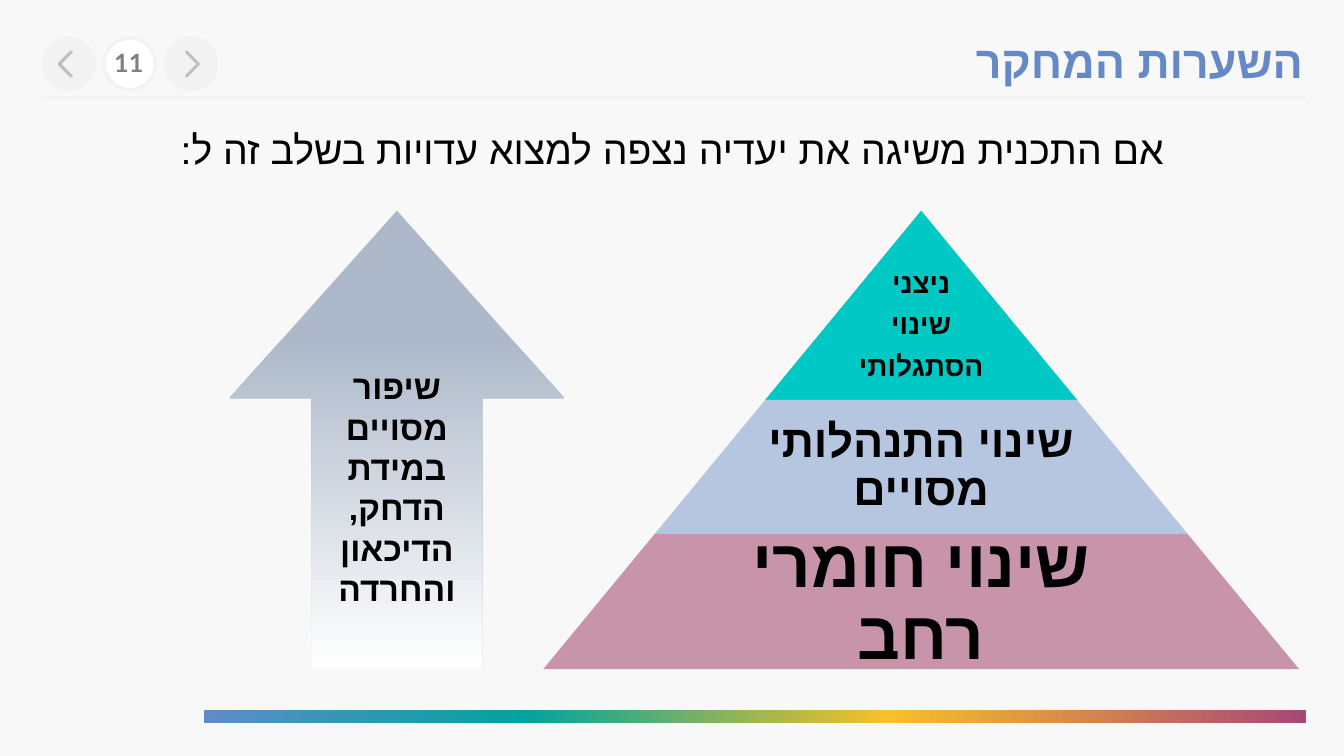
from lxml import etree
from pptx import Presentation
from pptx.dml.color import RGBColor
from pptx.enum.shapes import MSO_CONNECTOR, MSO_SHAPE
from pptx.enum.text import MSO_ANCHOR as Anchor, PP_ALIGN as Align
from pptx.oxml.ns import qn
from pptx.util import Pt

BLACK = RGBColor(0x00, 0x00, 0x00)
WHITE = RGBColor(0xFF, 0xFF, 0xFF)
BACKGROUND = RGBColor(0xF8, 0xF8, 0xF8)
PALE_GRAY = RGBColor(0xF2, 0xF2, 0xF2)
CHEVRON_GRAY = RGBColor(0xBF, 0xBF, 0xBF)
NUMBER_GRAY = RGBColor(0x80, 0x80, 0x80)
TITLE_BLUE = RGBColor(0x64, 0x89, 0xC6)
TOP_TEAL = RGBColor(0x00, 0xC9, 0xC5)
MIDDLE_BLUE = RGBColor(0xB6, 0xC6, 0xE1)
BASE_ROSE = RGBColor(0xC8, 0x94, 0xAA)
BAR_BLUE = RGBColor(0x5E, 0x8C, 0xC8)
BAR_TEAL = RGBColor(0x00, 0xA3, 0xA0)
BAR_YELLOW = RGBColor(0xF7, 0xC0, 0x27)
BAR_PURPLE = RGBColor(0xA6, 0x49, 0x77)
ARROW_GRAY = RGBColor(0xAD, 0xB9, 0xCA)


def fill_gradient(shape, degrees, stops):
    """Fill with a linear gradient; degrees run clockwise from left to right."""
    shape.fill.gradient()
    gradient = shape.fill._xPr.find(qn("a:gradFill"))
    stop_list = gradient.find(qn("a:gsLst"))
    for old_stop in list(stop_list):
        stop_list.remove(old_stop)
    for percent, color in stops:
        stop = etree.SubElement(stop_list, qn("a:gs"), pos=str(percent * 1000))
        etree.SubElement(stop, qn("a:srgbClr"), val=str(color))
    gradient.find(qn("a:lin")).set("ang", str(degrees * 60000))


def write_text(shape, lines, size, frame_format, paragraph_format,
               color=BLACK, bold=True, font_name="Arial"):
    """Write right-to-left paragraphs into a shape or text box."""
    frame = shape.text_frame
    frame.word_wrap = True
    for name, value in frame_format.items():
        setattr(frame, name, value)
    frame.text = "\n".join(lines)
    for paragraph in frame.paragraphs:
        for name, value in paragraph_format.items():
            setattr(paragraph, name, value)
        paragraph._p.get_or_add_pPr().set("rtl", "1")
        font = paragraph.runs[0].font
        font_format = {"name": font_name, "size": Pt(size), "bold": bold}
        for name, value in font_format.items():
            setattr(font, name, value)
        font.color.rgb = color
        etree.SubElement(font._element, qn("a:cs"), typeface=font_name)


presentation = Presentation()
presentation.slide_width = Pt(960)
presentation.slide_height = Pt(540)
slide = presentation.slides.add_slide(presentation.slide_layouts[6])
shapes = slide.shapes

# Background and colour bar
background = shapes.add_shape(MSO_SHAPE.RECTANGLE, 0, 0, Pt(960), Pt(540))
background.fill.solid()
background.fill.fore_color.rgb = BACKGROUND
bar = shapes.add_shape(MSO_SHAPE.RECTANGLE, Pt(145.5), Pt(507.4), Pt(787.5), Pt(8.8))
fill_gradient(bar, 0, [(0, BAR_BLUE), (29, BAR_TEAL), (62, BAR_YELLOW), (100, BAR_PURPLE)])
for shape in (background, bar):
    shape.line.fill.background()
    shape.shadow.inherit = False

# Navigation circles
for index, color in enumerate([PALE_GRAY, WHITE, PALE_GRAY]):
    circle = shapes.add_shape(MSO_SHAPE.OVAL, Pt(30.8 + 43.6 * index), Pt(27.3),
                              Pt(36.6), Pt(36.6))
    circle.fill.solid()
    circle.fill.fore_color.rgb = color
    circle.line.color.rgb = PALE_GRAY
    circle.line.width = Pt(2.25)
    circle.shadow.inherit = False

# Chevrons in the outer circles
for tip, back in [(42.3, 51.3), (141.8, 132.8)]:
    builder = shapes.build_freeform(Pt(back), Pt(36.7))
    builder.add_line_segments([(Pt(tip), Pt(45.7)), (Pt(back), Pt(54.7))], close=False)
    chevron = builder.convert_to_shape()
    chevron.fill.background()
    chevron.line.color.rgb = CHEVRON_GRAY
    chevron.line.width = Pt(2.25)
    chevron.shadow.inherit = False

# Line under the header
rule = shapes.add_connector(MSO_CONNECTOR.STRAIGHT, Pt(30.2), Pt(69.8), Pt(933), Pt(69.8))
rule.line.color.rgb = PALE_GRAY
rule.line.width = Pt(2.25)
etree.SubElement(rule._element.spPr, qn("a:effectLst"))

# Slide number, lead sentence and title
number = shapes.add_textbox(Pt(74.2), Pt(30.2), Pt(35.3), Pt(28.8))
write_text(number, ["11"], 18, {"vertical_anchor": Anchor.MIDDLE},
           {"alignment": Align.RIGHT}, NUMBER_GRAY, font_name="Lato")
lead = shapes.add_textbox(Pt(25.2), Pt(85.7), Pt(910), Pt(41))
write_text(lead, ["אם התכנית משיגה את יעדיה נצפה למצוא עדויות בשלב זה ל:"], 28,
           {}, {"alignment": Align.CENTER}, bold=False)
title = shapes.add_textbox(Pt(220.3), Pt(20.2), Pt(717.8), Pt(46))
write_text(title, ["השערות המחקר"], 32, {}, {"alignment": Align.RIGHT}, TITLE_BLUE)

# Pyramid: top, bottom, fill, lines, size, side inset, top inset, space after
CENTER, APEX, BASE, HALF_BASE = 658, 150.5, 478, 270
levels = [
    (APEX, 285.6, TOP_TEAL, ["ניצני", "שינוי", "הסתגלותי"], 20, 2, 31, 8),
    (285.6, 381.6, MIDDLE_BLUE, ["שינוי התנהלותי מסויים"], 32, 70, 3, 0),
    (381.6, BASE, BASE_ROSE, ["שינוי חומרי רחב"], 48, 99.5, 5, 0),
]
for top, bottom, color, lines, size, side, top_inset, space_after in levels:
    upper, lower = [HALF_BASE * (y - APEX) / (BASE - APEX) for y in (top, bottom)]
    builder = shapes.build_freeform(Pt(CENTER - lower), Pt(bottom))
    builder.add_line_segments([(Pt(CENTER - upper), Pt(top)), (Pt(CENTER + upper), Pt(top)),
                               (Pt(CENTER + lower), Pt(bottom))])
    level = builder.convert_to_shape()
    level.fill.solid()
    level.fill.fore_color.rgb = color
    level.line.fill.background()
    level.shadow.inherit = False
    write_text(level, lines, size,
               {"vertical_anchor": Anchor.MIDDLE, "margin_left": Pt(side),
                "margin_right": Pt(side), "margin_top": Pt(top_inset),
                "margin_bottom": Pt(min(top_inset, 5) if side > 2 else 2)},
               {"alignment": Align.CENTER, "line_spacing": 0.9,
                "space_after": Pt(space_after)})

# Improvement arrow
arrow = shapes.add_shape(MSO_SHAPE.UP_ARROW, Pt(164), Pt(150.5), Pt(239), Pt(327))
arrow.adjustments[0] = 0.51
arrow.adjustments[1] = 0.56
fill_gradient(arrow, 90, [(1, ARROW_GRAY), (28, ARROW_GRAY), (100, WHITE)])
arrow.line.fill.background()
arrow.shadow.inherit = False
write_text(arrow, ["שיפור מסויים במידת הדחק, הדיכאון והחרדה"], 24,
           {"vertical_anchor": Anchor.MIDDLE}, {"alignment": Align.CENTER})

presentation.save("out.pptx")
